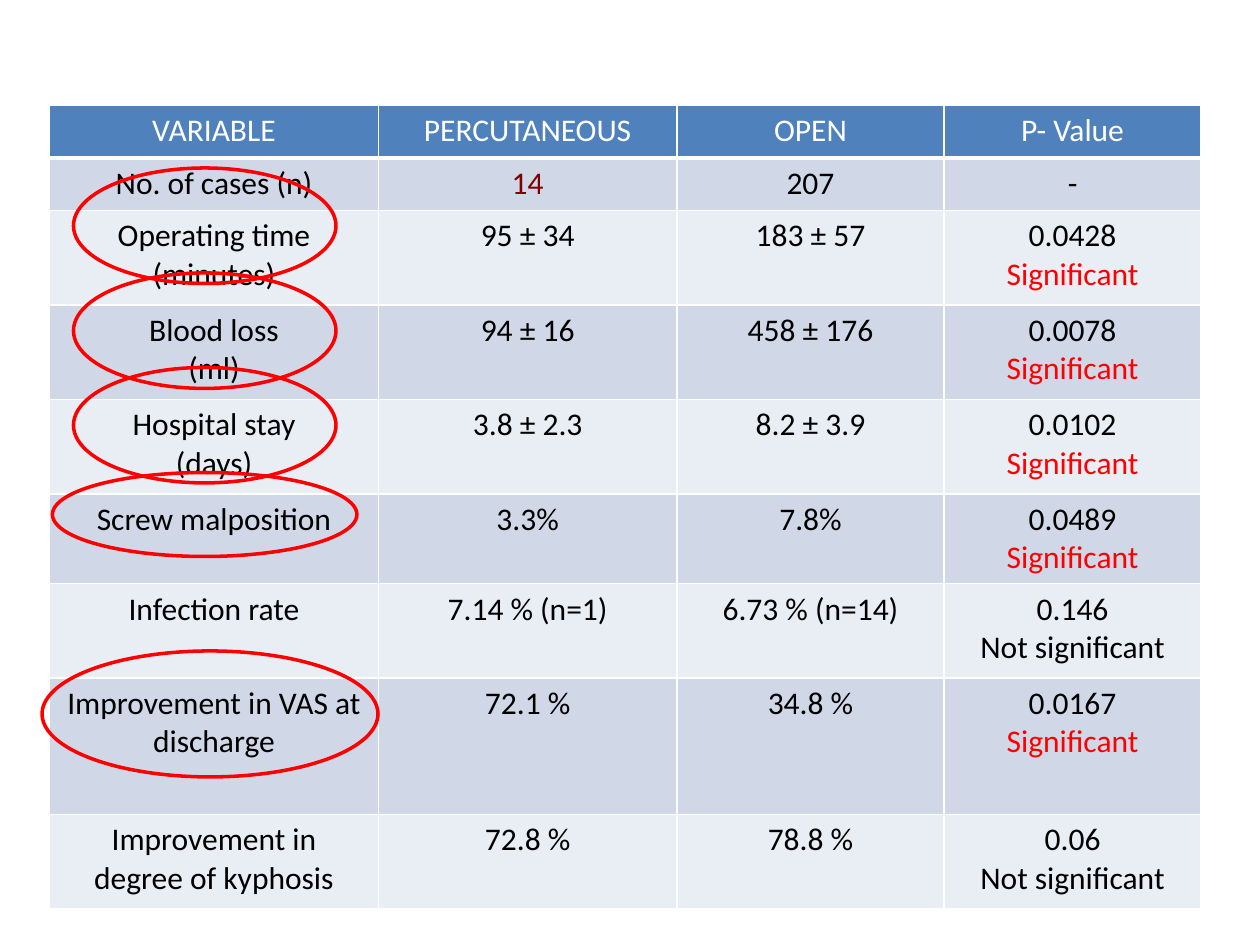
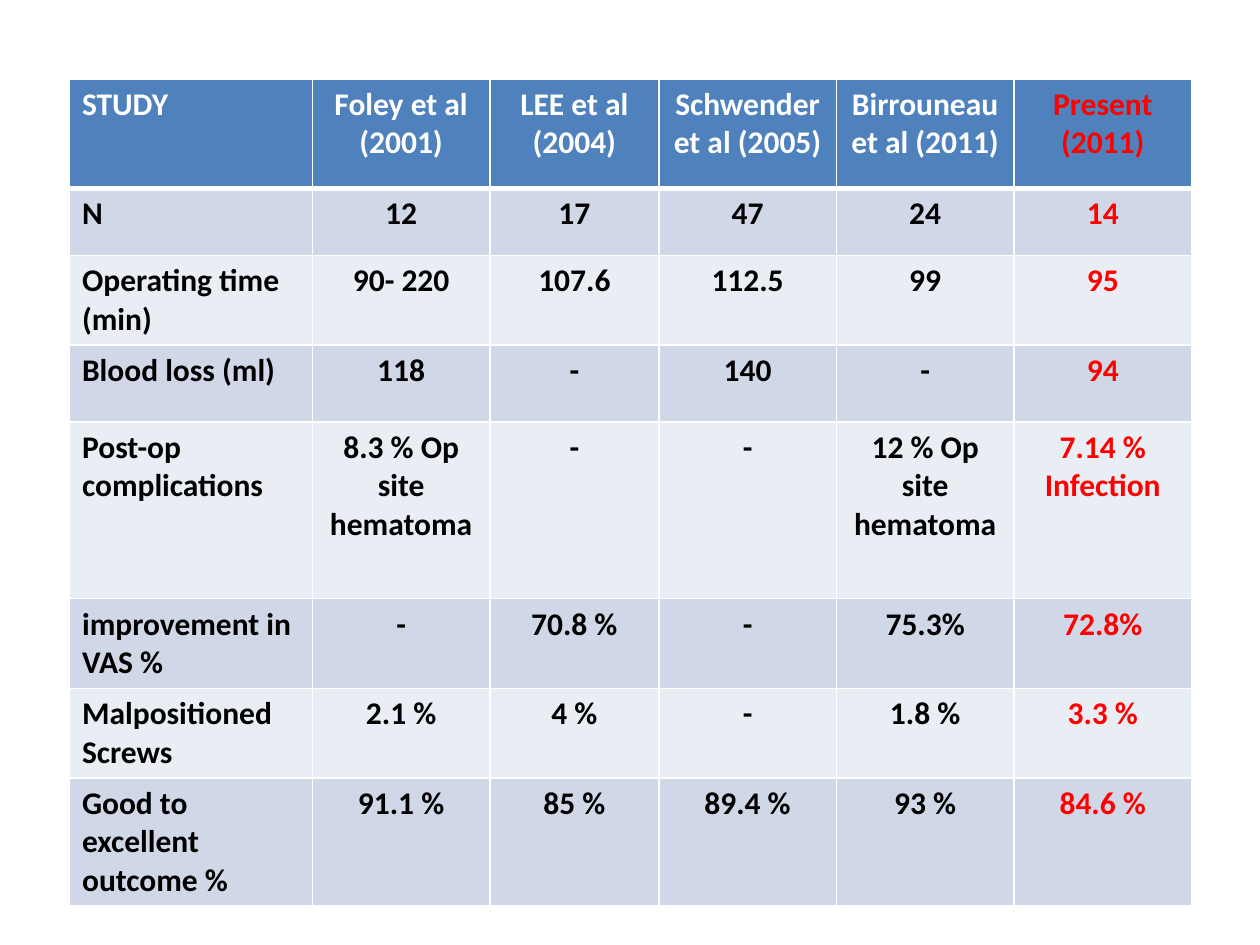
from dataclasses import dataclass
from lxml import etree
from pptx import Presentation
from pptx import util as u
from pptx.dml import color
from pptx.enum import shapes, text
from pptx.oxml import ns

Pt = u.Pt


@dataclass(frozen=True)
class Theme:
    font: str = "Calibri"
    size: float = 18
    head: str = "4F81BD"
    bands: tuple = ("E9EDF4", "D0D8E8")
    white: str = "FFFFFF"
    black: str = "000000"
    red: str = "FF0000"
    maroon: str = "800000"
    rule: float = 1
    thick: float = 3
    ring: float = 2


def rgb(code):
    return color.RGBColor.from_string(code)


class Deck:
    def __init__(self, theme):
        self.theme = theme
        self.prs = Presentation()
        self.prs.slide_width, self.prs.slide_height = Pt(720), Pt(540)
        self.slide = None

    def page(self):
        self.slide = self.prs.slides.add_slide(self.prs.slide_layouts[6])

    def edge(self, cell, head):
        """Draw the white rules around a cell, thicker below the header."""
        props = cell._tc.get_or_add_tcPr()
        for side in "LRTB":
            wide = self.theme.thick if head and side == "B" else self.theme.rule
            line = etree.SubElement(props, ns.qn(f"a:ln{side}"), w=str(Pt(wide)))
            fill = etree.SubElement(line, ns.qn("a:solidFill"))
            etree.SubElement(fill, ns.qn("a:srgbClr"), val=self.theme.white)

    def label(self, cell, words, tint, align, bold):
        """Put text in a cell; tint gives the colour of each line."""
        style = {"name": self.theme.font, "size": Pt(self.theme.size), "bold": bold}
        frame = cell.text_frame
        frame.text = words
        for para in frame.paragraphs:
            para.alignment = align
            for run in para.runs:
                for key, value in style.items():
                    setattr(run.font, key, value)
                run.font.color.rgb = rgb(tint(run.text))

    def table(self, left, top, cols, highs, rows, tint, bold=False, first=text.PP_ALIGN.CENTER):
        """Place a banded table; tint(row, col, line) may override the text colour."""
        t = self.theme
        grid = self.slide.shapes.add_table(
            len(rows), len(cols), Pt(left), Pt(top), Pt(sum(cols)), Pt(sum(highs))).table
        grid.horz_banding = False
        for col, wide in zip(grid.columns, cols):
            col.width = Pt(wide)
        for row, high in zip(grid.rows, highs):
            row.height = Pt(high)
        for r, row in enumerate(rows):
            base = t.black if r else t.white
            for c, words in enumerate(row):
                cell = grid.cell(r, c)
                self.edge(cell, r == 0)
                cell.fill.solid()
                cell.fill.fore_color.rgb = rgb(t.bands[r % 2] if r else t.head)
                align = text.PP_ALIGN.CENTER if c else first
                self.label(cell, words, lambda line: tint(r, c, line) or base, align, bold)

    def ring(self, left, top, wide, high):
        oval = self.slide.shapes.add_shape(
            shapes.MSO_SHAPE.OVAL, Pt(left), Pt(top), Pt(wide), Pt(high))
        oval.shadow.inherit = False
        oval.fill.background()
        oval.line.color.rgb = rgb(self.theme.red)
        oval.line.width = Pt(self.theme.ring)


# Table contents; a line feed starts a new paragraph
GROUPS = [
    ("VARIABLE", "PERCUTANEOUS", "OPEN", "P- Value"),
    ("No. of cases (n)", "14", "207", "-"),
    ("Operating time\n(minutes)", "95 ± 34", "183 ± 57", "0.0428\nSignificant"),
    ("Blood loss\n(ml)", "94 ± 16", "458 ± 176", "0.0078\nSignificant"),
    ("Hospital stay\n(days)", "3.8 ± 2.3", "8.2 ± 3.9", "0.0102\nSignificant"),
    ("Screw malposition", "3.3%", "7.8%", "0.0489\nSignificant"),
    ("Infection rate", "7.14 % (n=1)", "6.73 % (n=14)", "0.146\nNot significant"),
    ("Improvement in VAS at discharge", "72.1 %", "34.8 %", "0.0167\nSignificant"),
    ("Improvement in\vdegree of kyphosis", "72.8 %", "78.8 %", "0.06\nNot significant"),
]
STUDIES = [
    ("STUDY", "Foley et al\n(2001)", "LEE et al\n(2004)", "Schwender et al (2005)",
     "Birrouneau et al (2011)", "Present\n(2011)"),
    ("N", "12", "17", "47", "24", "14"),
    ("Operating time (min)", "90- 220", "107.6", "112.5", "99", "95"),
    ("Blood loss (ml)", "118", "-", "140", "-", "94"),
    ("Post-op complications", "8.3 % Op site hematoma", "-", "-",
     "12 % Op site hematoma", "7.14 %\nInfection"),
    ("improvement in VAS %", "-", "70.8 %", "-", "75.3%", "72.8%"),
    ("Malpositioned Screws", "2.1 %", "4 %", "-", "1.8 %", "3.3 %"),
    ("Good to excellent outcome %", "91.1 %", "85 %", "89.4 %", "93 %", "84.6 %"),
]


def main():
    theme = Theme()
    deck = Deck(theme)

    # Percutaneous against open surgery
    marks = {"Significant": theme.red, "14": theme.maroon}
    deck.page()
    deck.table(28.3, 60, [188, 170.5, 152.8, 146.7],
               [30.2, 30.2, 54, 54, 54, 49, 54, 77.8, 54], GROUPS,
               lambda r, c, line: marks.get(line))

    # Rings around the variables that differ
    for top in (96, 156, 210):
        deck.ring(42, top, 150, 66)
    deck.ring(24, 372, 192, 72)
    deck.ring(30, 270, 174, 48)

    # Present study against earlier ones
    last = len(STUDIES[0]) - 1
    deck.page()
    deck.table(39.7, 45, [138.8, 101.5, 96.5] + [101.5] * 3,
               [62.8, 38.2, 50, 44, 101, 50, 50, 70.6], STUDIES,
               lambda r, c, line: theme.red if c == last else None,
               bold=True, first=text.PP_ALIGN.LEFT)

    deck.prs.save("out.pptx")


if __name__ == "__main__":
    main()
